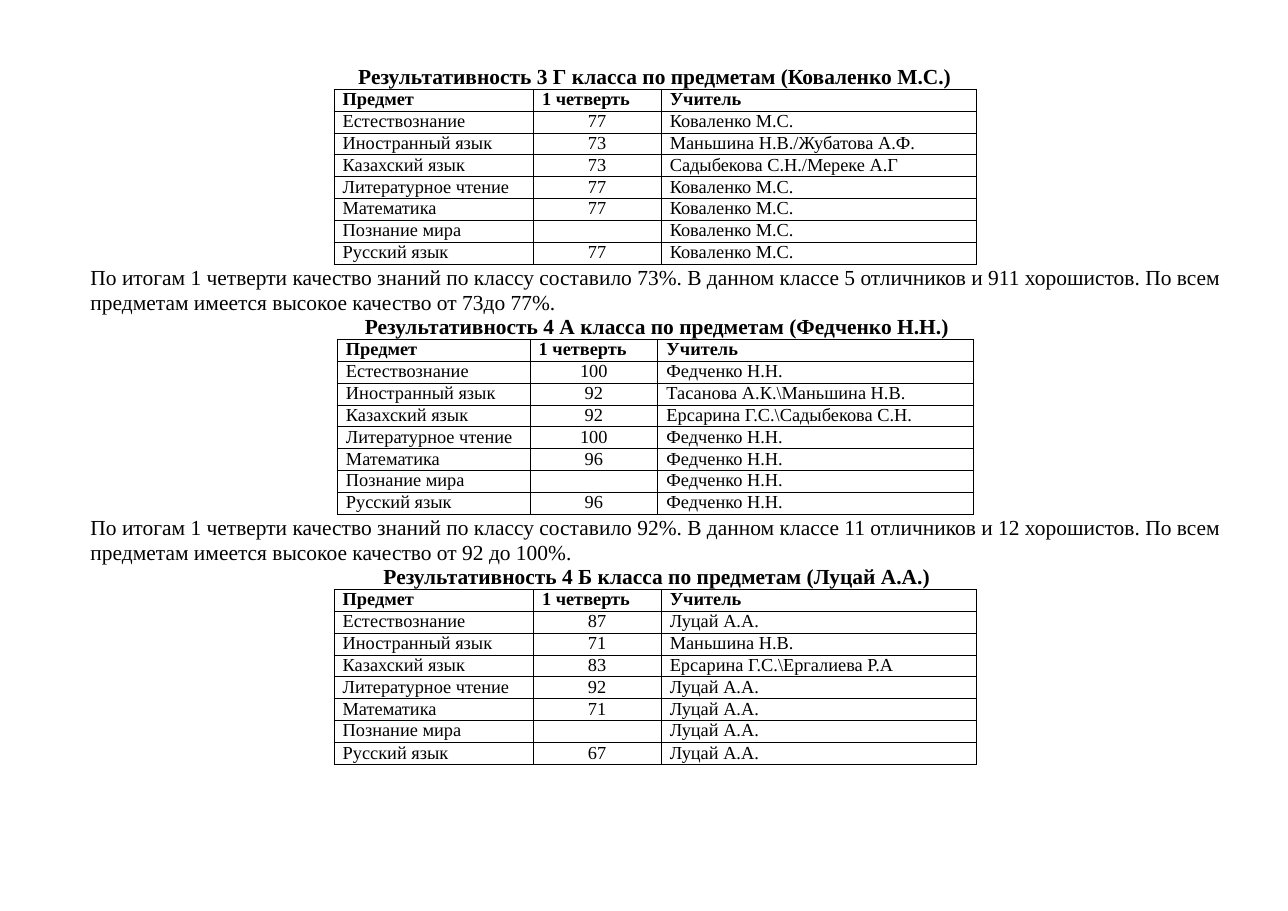
"""Build the slide of quarter results by subject for three classes."""
from dataclasses import dataclass

from lxml import etree
from pptx import Presentation
from pptx import util as u
from pptx.dml.color import RGBColor
from pptx.enum import text as t
from pptx.oxml.ns import qn


@dataclass(frozen=True)
class Theme:
    font: str = "Times New Roman"
    ink: str = "000000"
    body: float = 14
    cell: float = 12
    rule: float = 0.5


def write(paragraph, content, theme, size, bold=False, align=t.PP_ALIGN.LEFT,
          indent=0, leading=None, before=0):
    paragraph.alignment = align
    paragraph.space_before = u.Pt(before)
    if leading:
        paragraph.line_spacing = u.Pt(leading)
    properties = paragraph._p.get_or_add_pPr()
    properties.set("marL", str(int(indent)))
    properties.set("indent", "0")
    if not content:
        etree.SubElement(paragraph._p, qn("a:endParaRPr"), sz=str(int(size * 100)))
        return
    run = paragraph.add_run()
    run.text = content
    run.font.name = theme.font
    run.font.size = u.Pt(size)
    run.font.bold = bold
    run.font.color.rgb = RGBColor.from_string(theme.ink)


class Page:
    def __init__(self, deck, theme):
        self.theme = theme
        self.width, self.height = deck.slide_width, deck.slide_height
        self.slide = deck.slides.add_slide(deck.slide_layouts[6])

    def across(self, percent):
        return int(self.width * percent / 100)

    def down(self, percent):
        return int(self.height * percent / 100)

    def text(self, left, top, width, height, paragraphs, inset):
        frame = self.slide.shapes.add_textbox(
            self.across(left), self.down(top),
            self.across(width), self.down(height)).text_frame
        frame.word_wrap = True
        frame.margin_left = frame.margin_right = frame.margin_bottom = 0
        frame.margin_top = self.down(inset)
        for index, (content, indent, look) in enumerate(paragraphs):
            paragraph = frame.add_paragraph() if index else frame.paragraphs[0]
            write(paragraph, content, self.theme, self.theme.body,
                  indent=self.across(indent), **look)

    def table(self, centre, top, columns, row_height, rows):
        width = sum(columns)
        grid = self.slide.shapes.add_table(
            len(rows), len(columns), self.across(centre - width / 2),
            self.down(top), self.across(width),
            self.down(row_height * len(rows))).table
        grid.first_row = grid.horz_banding = False
        for column, share in zip(grid.columns, columns):
            column.width = self.across(share)
        for r, row in enumerate(rows):
            grid.rows[r].height = self.down(row_height)
            for c, content in enumerate(row):
                centred = r > 0 and c == 1
                cell = grid.cell(r, c)
                self.frame_cell(cell)
                write(cell.text_frame.paragraphs[0], content, self.theme,
                      self.theme.cell, bold=r == 0, leading=13.4,
                      align=t.PP_ALIGN.CENTER if centred else t.PP_ALIGN.LEFT,
                      indent=0 if centred else self.across(0.68))

    def frame_cell(self, cell):
        cell.margin_left = cell.margin_right = 0
        cell.margin_top = cell.margin_bottom = 0
        properties = cell._tc.get_or_add_tcPr()
        for side in "LRTB":
            edge = etree.SubElement(properties, qn(f"a:ln{side}"),
                                    w=str(u.Pt(self.theme.rule)))
            fill = etree.SubElement(edge, qn("a:solidFill"))
            etree.SubElement(fill, qn("a:srgbClr"), val=self.theme.ink)
        cell.fill.background()


HEADER = ("Предмет", "1 четверть", "Учитель")
SUBJECTS = ("Естествознание", "Иностранный язык", "Казахский язык",
            "Литературное чтение", "Математика", "Познание мира", "Русский язык")
FOREIGN, KAZAKH = SUBJECTS[1:3]

CLASSES = (
    ("3 Г", "Коваленко М.С.", ("77", "73", "73", "77", "77", "", "77"),
     {FOREIGN: "Маньшина Н.В./Жубатова А.Ф.", KAZAKH: "Садыбекова С.Н./Мереке А.Г"},
     15.48),
    ("4 А", "Федченко Н.Н.", ("100", "92", "92", "100", "96", "", "96"),
     {FOREIGN: "Тасанова А.К.\\Маньшина Н.В.", KAZAKH: "Ерсарина Г.С.\\Садыбекова С.Н."},
     14.97),
    ("4 Б", "Луцай А.А.", ("87", "71", "83", "92", "71", "", "67"),
     {FOREIGN: "Маньшина Н.В.", KAZAKH: "Ерсарина Г.С.\\Ергалиева Р.А"},
     15.48),
)

SUMMARIES = (("73%", "5 отличников и 911", "73до 77%", 21.39),
             ("92%", "11 отличников и 12", "92 до 100%", 22.84))

FIRST_TABLE, CLASS_PITCH, SUMMARY_OFFSET = 9.79, 27.45, 18.98


def heading(group, teacher):
    return f"Результативность {group} класса по предметам ({teacher})"


def summary(quality, pupils, span):
    return (f"По итогам 1 четверти качество знаний по классу составило {quality}. "
            f"В данном классе {pupils} хорошистов. По всем предметам имеется "
            f"высокое качество от {span}.")


def main():
    deck = Presentation()
    deck.slide_width, deck.slide_height = u.Inches(11.69), u.Inches(8.27)
    page = Page(deck, Theme())

    page.text(27.72, 6.77, 46.54, 3.14,
              [(heading(*CLASSES[0][:2]), 0.09, {"bold": True, "before": 0.9})],
              inset=0.12)

    for index, (group, teacher, marks, others, subject_width) in enumerate(CLASSES):
        results = [(subject, mark, others.get(subject, teacher))
                   for subject, mark in zip(SUBJECTS, marks)]
        page.table(50.86, FIRST_TABLE + index * CLASS_PITCH,
                   (subject_width, 9.92, 24.47), 2.4, [HEADER, *results])

    for index, (*figures, heading_indent) in enumerate(SUMMARIES):
        page.text(6.93, FIRST_TABLE + SUMMARY_OFFSET + index * CLASS_PITCH, 88.2, 8.59,
                  [(summary(*figures), 0.09, {"leading": 16.1, "before": 2}),
                   (heading(*CLASSES[index + 1][:2]), heading_indent,
                    {"leading": 15.9, "bold": True})],
                  inset=0.36)

    deck.save("out.pptx")


if __name__ == "__main__":
    main()
